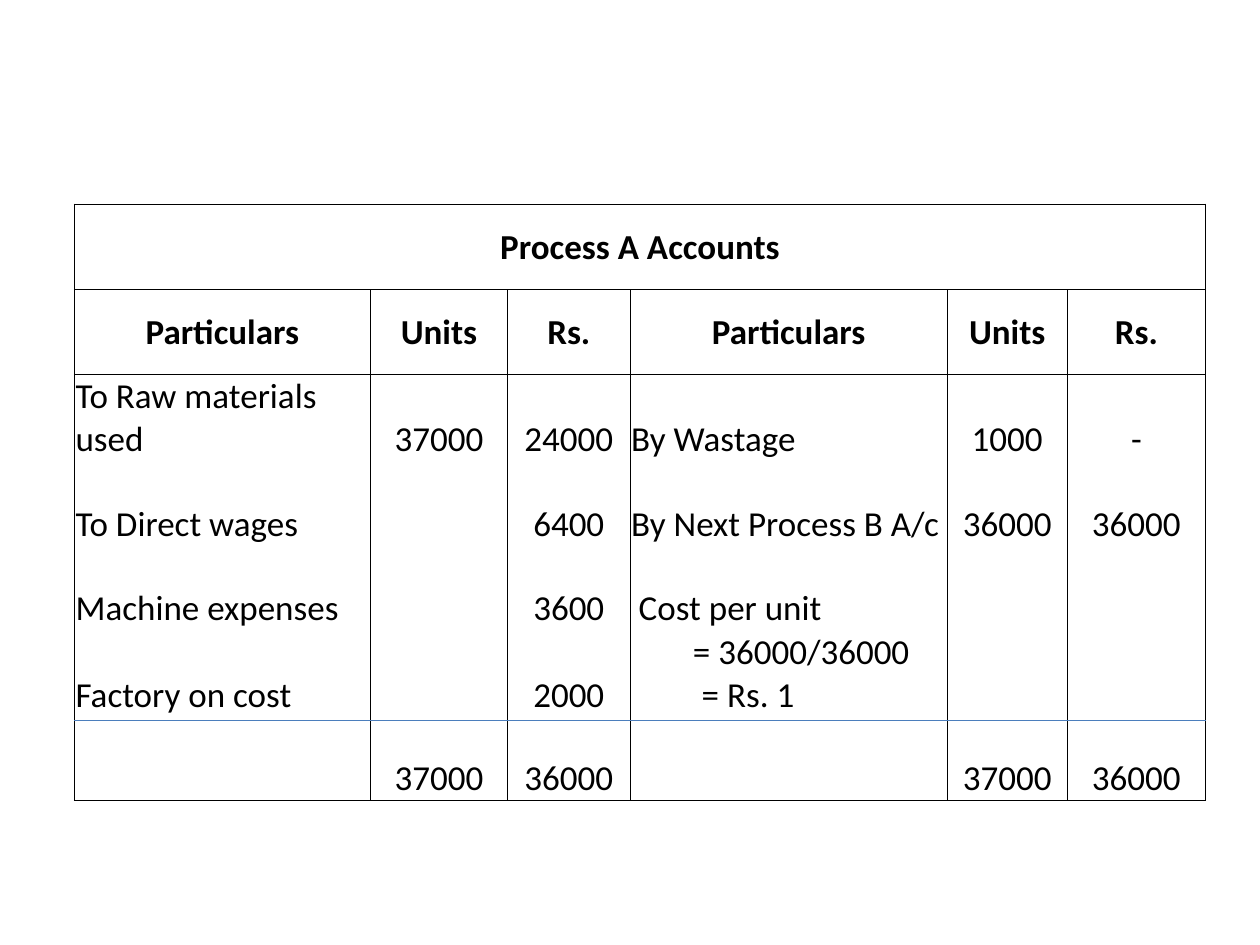
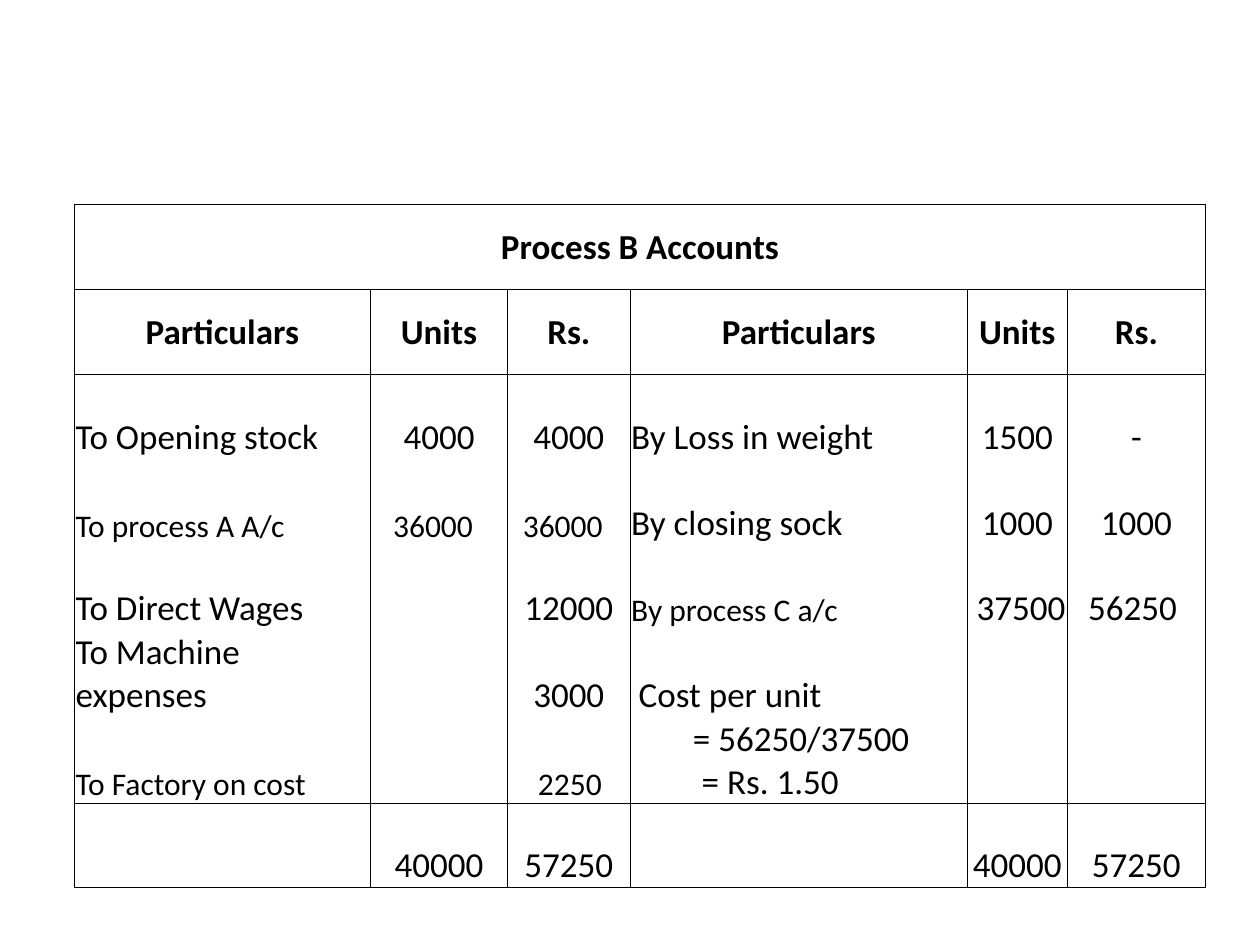
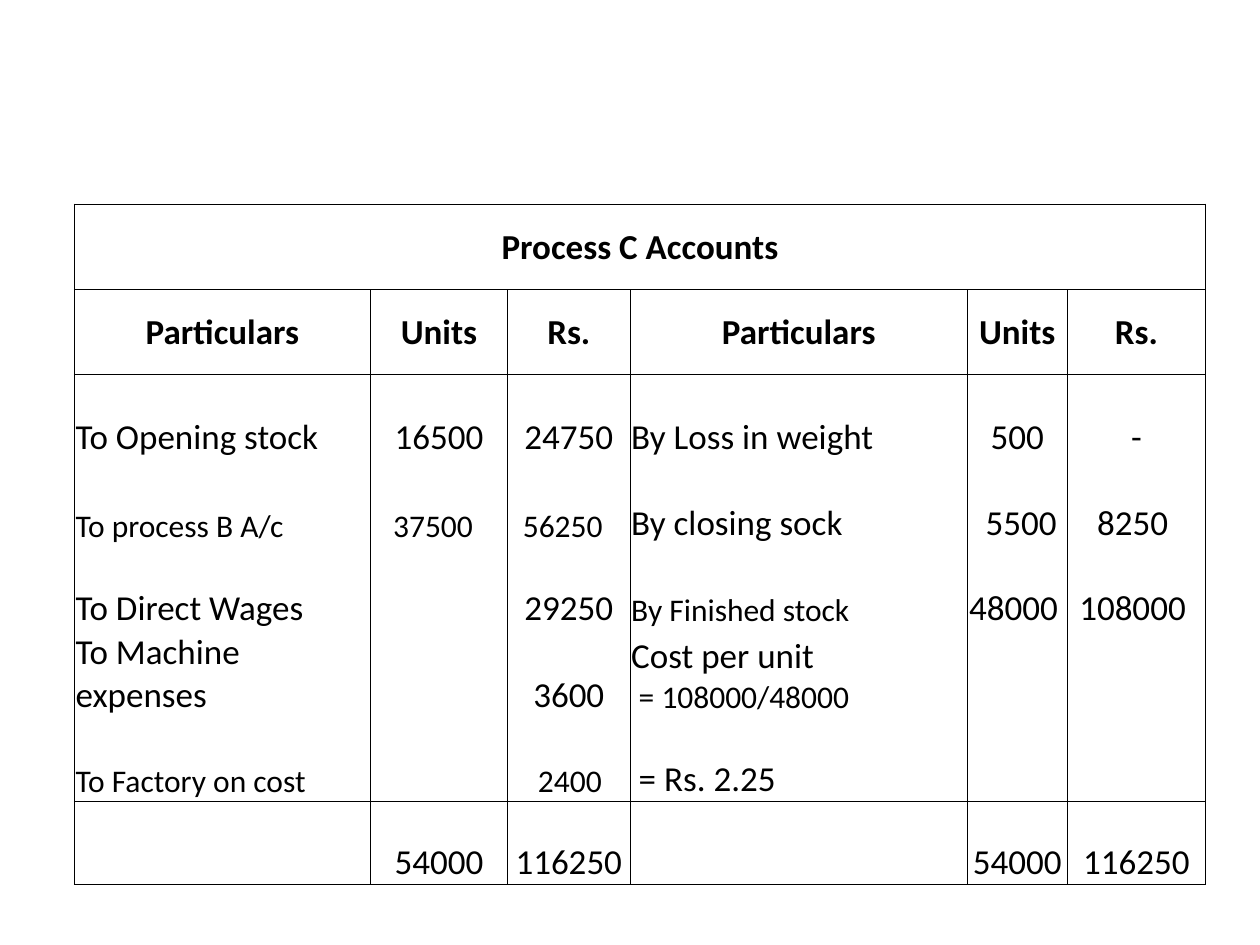
import pptx
import pptx.util
import pptx.oxml.ns
import pptx.dml.color
import pptx.enum.shapes
import pptx.enum.text
from lxml import etree

Inches = pptx.util.Inches
Pt = pptx.util.Pt
qn = pptx.oxml.ns.qn
ALIGN = pptx.enum.text.PP_ALIGN
ANCHOR = pptx.enum.text.MSO_ANCHOR

COLORS = {"ink": "000000", "rule": "4B7EBC"}
FONT = "Calibri"
BOX = (0.59, 1.62)
TITLE_ROW = 0.68
ROW = 0.67
TALL_ROW = 0.69
TOTAL_ROW = 0.66
RULE_OFFSET = 4.1
SPACE = 0.06
NARROW_UNITS = [2.35, 1.09, 0.97, 2.68, 0.79, 1.1]
WIDE_UNITS = [2.35, 1.09, 0.97, 2.52, 0.95, 1.1]
HEADINGS = ["Particulars", "Units", "Rs."] * 2
PARTICULARS = (0, 3)


def entry(text, size=20, indent=0, trail=0, align=None):
    return {"text": text, "size": size, "indent": indent, "trail": trail, "align": align}


def small(text, indent=0):
    return entry(text, size=18, indent=indent, align=ALIGN.LEFT)


def write(paragraph, text, size=20, bold=False, align=ALIGN.LEFT, indent=0):
    paragraph.alignment = align
    if indent:
        properties = paragraph._p.get_or_add_pPr()
        properties.set("marL", str(Inches(indent)))
        properties.set("indent", "0")
    run = paragraph.add_run()
    run.text = text
    run.font.name = FONT
    run.font.size = Pt(size)
    run.font.bold = bold
    run.font.color.rgb = pptx.dml.color.RGBColor.from_string(COLORS["ink"])


def set_borders(cell, sides):
    properties = cell._tc.get_or_add_tcPr()
    for side in "LRTB":
        line = etree.SubElement(properties, qn("a:ln" + side), w=str(Pt(0.5)))
        if side in sides:
            fill = etree.SubElement(line, qn("a:solidFill"))
            etree.SubElement(fill, qn("a:srgbClr"), val=COLORS["ink"])
        else:
            etree.SubElement(line, qn("a:noFill"))


def fill_cell(cell, content, column, heading):
    cell.margin_left = cell.margin_top = cell.margin_right = Inches(0.01)
    cell.margin_bottom = 0
    cell.vertical_anchor = ANCHOR.MIDDLE if heading else ANCHOR.BOTTOM
    cell.fill.background()
    usual = ALIGN.LEFT if column in PARTICULARS and not heading else ALIGN.CENTER
    entries = content if isinstance(content, list) else [content]
    for position, item in enumerate(entries):
        if not item:
            continue
        item = entry(item) if isinstance(item, str) else item
        frame = cell.text_frame
        paragraph = frame.add_paragraph() if position else frame.paragraphs[0]
        write(paragraph, item["text"], size=item["size"], bold=heading,
              align=item["align"] or usual, indent=item["indent"])
        if item["trail"]:
            cell.margin_right = Inches(0.01 + item["trail"])


def account_table(slide, box, account):
    left, top = box
    widths = account["widths"]
    rows = [[account["title"]] + [""] * 5, HEADINGS] + account["entries"] + [account["totals"]]
    last = len(rows) - 1
    heights = [TALL_ROW if number in account["tall"] else ROW for number in range(len(rows))]
    heights[0], heights[last] = TITLE_ROW, TOTAL_ROW
    table = slide.shapes.add_table(len(rows), len(widths), Inches(left), Inches(top),
                                   Inches(sum(widths)), Inches(sum(heights))).table
    table.first_row = table.horz_banding = False
    for column, width in zip(table.columns, widths):
        column.width = Inches(width)
    ruled_tops = {0, 1, 2}
    if not account["drawn_rule"]:
        ruled_tops.add(last)
    for number, contents in enumerate(rows):
        table.rows[number].height = Inches(heights[number])
        sides = "LR"
        if number in ruled_tops:
            sides += "T"
        if number == last or number + 1 in ruled_tops:
            sides += "B"
        for column, content in enumerate(contents):
            cell = table.cell(number, column)
            set_borders(cell, sides)
            fill_cell(cell, content, column, heading=number < 2)
    table.cell(0, 0).merge(table.cell(0, len(widths) - 1))
    if account["drawn_rule"]:
        total_rule(slide, left, top + RULE_OFFSET, sum(widths))


def total_rule(slide, left, top, width):
    rule = slide.shapes.add_connector(pptx.enum.shapes.MSO_CONNECTOR.STRAIGHT, Inches(left),
                                      Inches(top), Inches(left + width), Inches(top))
    rule.line.color.rgb = pptx.dml.color.RGBColor.from_string(COLORS["rule"])
    rule.line.width = Pt(0.75)
    etree.SubElement(rule._element.spPr, qn("a:effectLst"))


def cost_lines(division, result):
    return [entry(division, indent=0.49), entry(result, indent=0.56)]


ACCOUNTS = [
    {
        "title": "Process A Accounts", "widths": WIDE_UNITS, "tall": {2, 5}, "drawn_rule": True,
        "entries": [
            ["To Raw materials used", "37000", "24000", "By Wastage", "1000", "-"],
            ["To Direct wages", "", "6400", "By Next Process B A/c", "36000", "36000"],
            ["Machine expenses", "", "3600", entry("Cost per unit", indent=SPACE), "", ""],
            ["Factory on cost", "", "2000", cost_lines("= 36000/36000", "= Rs. 1"), "", ""],
        ],
        "totals": ["", "37000", "36000", "", "37000", "36000"],
    },
    {
        "title": "Process B Accounts", "widths": NARROW_UNITS, "tall": {3, 5, 6}, "drawn_rule": False,
        "entries": [
            ["To Opening stock", "4000", "4000", "By Loss in weight", "1500", "-"],
            [small("To process A A/c"), small("36000", 0.17), small("36000", 0.11),
             "By closing sock", "1000", "1000"],
            ["To Direct Wages", "", "12000", small("By process C a/c"),
             entry("37500", indent=SPACE), entry("56250", trail=SPACE)],
            ["To Machine expenses", "", "3000", entry("Cost per unit", indent=SPACE), "", ""],
            [small("To Factory on cost"), "", small("2250", 0.23),
             cost_lines("= 56250/37500", "= Rs. 1.50"), "", ""],
        ],
        "totals": ["", "40000", "57250", "", "40000", "57250"],
    },
    {
        "title": "Process C Accounts", "widths": NARROW_UNITS, "tall": {3, 5}, "drawn_rule": False,
        "entries": [
            ["To Opening stock", "16500", "24750", "By Loss in weight", "500", "-"],
            [small("To process B A/c"), small("37500", 0.17), small("56250", 0.11),
             "By closing sock", entry("5500", indent=SPACE), entry("8250", trail=SPACE)],
            ["To Direct Wages", "", "29250", small("By Finished stock"),
             entry("48000", trail=SPACE), entry("108000", trail=SPACE)],
            ["To Machine expenses", "", "3600",
             ["Cost per unit", small("= 108000/48000", SPACE)], "", ""],
            [small("To Factory on cost"), "", small("2400", 0.23),
             entry("= Rs. 2.25", indent=SPACE), "", ""],
        ],
        "totals": ["", "54000", "116250", "", "54000", "116250"],
    },
]


def main():
    deck = pptx.Presentation()
    deck.slide_width = Inches(10)
    deck.slide_height = Inches(7.5)
    for account in ACCOUNTS:
        slide = deck.slides.add_slide(deck.slide_layouts[6])
        account_table(slide, BOX, account)
    deck.save("out.pptx")


if __name__ == "__main__":
    main()
